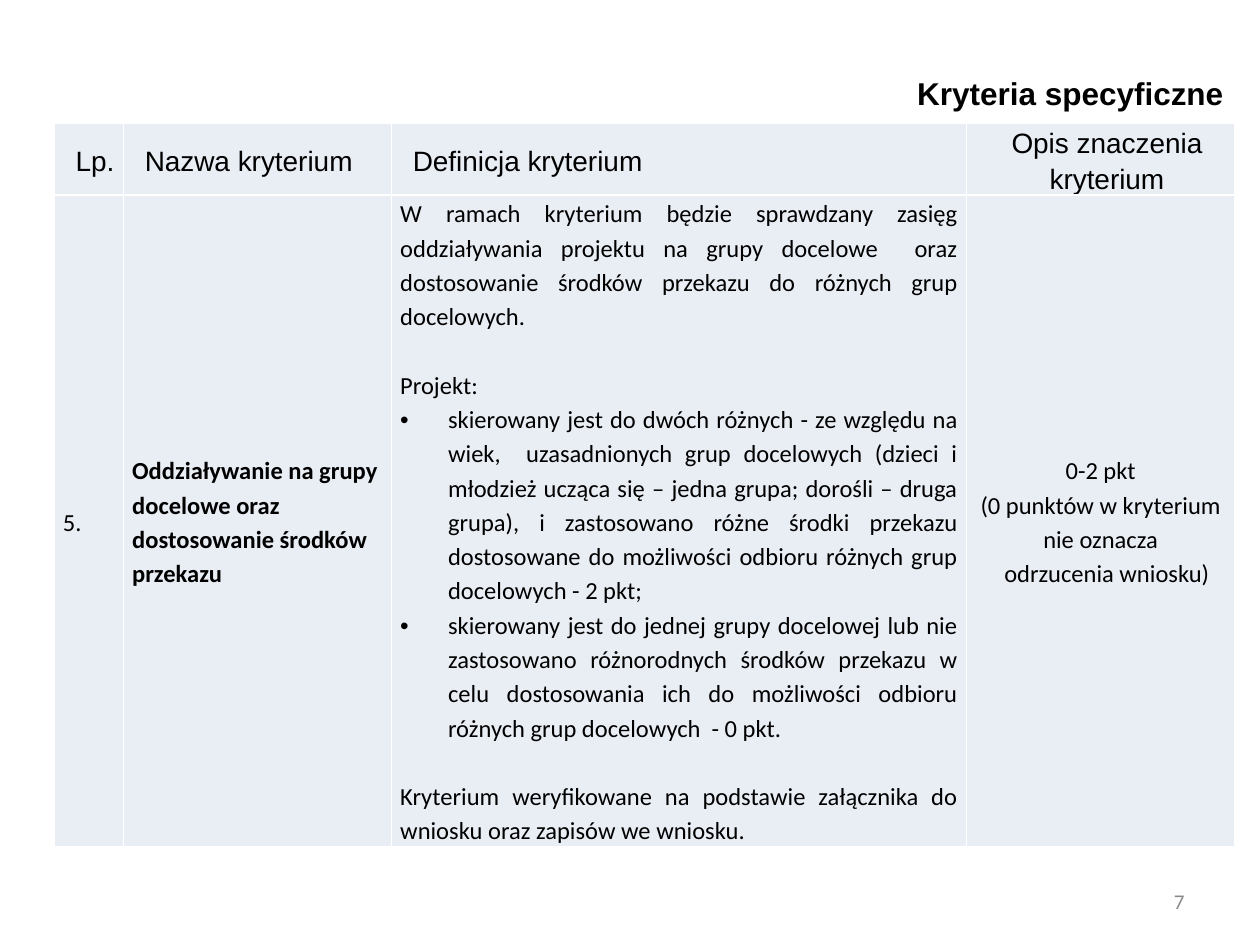
from lxml import etree
from pptx import Presentation
from pptx.dml.color import RGBColor
from pptx.enum.text import MSO_ANCHOR, MSO_AUTO_SIZE, PP_ALIGN
from pptx.oxml.ns import qn
from pptx.util import Emu, Inches, Pt

LEFT, CENTER, RIGHT, JUSTIFY = PP_ALIGN.LEFT, PP_ALIGN.CENTER, PP_ALIGN.RIGHT, PP_ALIGN.JUSTIFY
TOP, MIDDLE = MSO_ANCHOR.TOP, MSO_ANCHOR.MIDDLE
NO_AUTOFIT = MSO_AUTO_SIZE.NONE
TITLE_ONLY = 5
BLACK, WHITE, GREY, PALE_BLUE = "000000", "FFFFFF", "898989", "E9EDF4"
LINE_GAP = 19.6

COLUMN_SHARES = (0.55, 2.13, 4.57, 2.13)
ROW_SHARES = (0.55, 5.15)
HEADINGS = ("Lp.", "Nazwa kryterium", "Definicja kryterium", "Opis znaczenia kryterium")
CRITERION = (
    [("5.", {"after": 10})],
    [("Oddziaływanie na grupy docelowe oraz dostosowanie środków przekazu", {"bold": True})],
    [
        ("W ramach kryterium będzie sprawdzany zasięg oddziaływania projektu na grupy "
         "docelowe  oraz dostosowanie środków przekazu do różnych grup docelowych.", {}),
        ("Projekt:", {"before": LINE_GAP}),
        ("skierowany jest do dwóch różnych - ze względu na wiek,  uzasadnionych grup docelowych "
         "(dzieci i młodzież ucząca się – jedna grupa; dorośli – druga grupa), i zastosowano "
         "różne środki przekazu dostosowane do możliwości odbioru różnych grup docelowych - 2 pkt;",
         {"bullet": "•"}),
        ("skierowany jest do jednej grupy docelowej lub nie zastosowano różnorodnych środków "
         "przekazu w celu dostosowania ich do możliwości odbioru różnych grup docelowych  - 0 pkt.",
         {"bullet": "•"}),
        ("Kryterium weryfikowane na podstawie załącznika do wniosku oraz zapisów we wniosku.",
         {"before": LINE_GAP}),
    ],
    [
        ("0-2 pkt", {}),
        ("(0 punktów w kryterium nie oznacza", {}),
        ("odrzucenia wniosku)", {"margin": 0.1, "after": 10}),
    ],
)
CRITERION_ALIGNMENTS = (LEFT, LEFT, JUSTIFY, CENTER)


def color(hex_value):
    """Turn a hex string into a colour."""
    return RGBColor.from_string(hex_value)


def write(paragraph, text, size=14, font="Calibri", fill=BLACK, bold=False, align=LEFT,
          spacing=1.15, before=0, after=0, margin=0, bullet=None):
    """Fill one paragraph with formatted text."""
    paragraph.alignment = align
    paragraph.line_spacing = spacing
    paragraph.space_before = Pt(before)
    paragraph.space_after = Pt(after)
    properties = paragraph._p.get_or_add_pPr()
    hanging = Inches(0.38) if bullet else 0
    properties.set("marL", str(hanging or Inches(margin)))
    properties.set("indent", str(-hanging))
    if bullet:
        etree.SubElement(properties, qn("a:buFont")).set("typeface", "Arial")
        etree.SubElement(properties, qn("a:buChar")).set("char", bullet)
    run = paragraph.add_run()
    run.text = text
    run.font.size = Pt(size)
    run.font.name = font
    run.font.bold = bold
    run.font.color.rgb = color(fill)


def add_borders(cell):
    """Draw a thin white line on each side of a cell."""
    properties = cell._tc.get_or_add_tcPr()
    for position, side in enumerate(("lnL", "lnR", "lnT", "lnB")):
        line = etree.Element(qn(f"a:{side}"), w=str(Pt(1)))
        solid = etree.SubElement(line, qn("a:solidFill"))
        etree.SubElement(solid, qn("a:srgbClr")).set("val", WHITE)
        properties.insert(position, line)


def fill_cell(cell, paragraphs, **style):
    """Format a table cell and write its paragraphs."""
    cell.fill.solid()
    cell.fill.fore_color.rgb = color(PALE_BLUE)
    add_borders(cell)
    cell.vertical_anchor = MIDDLE
    cell.margin_left = cell.margin_right = Inches(0.07)
    cell.margin_top = cell.margin_bottom = 0
    frame = cell.text_frame
    for index, (text, own_style) in enumerate(paragraphs):
        paragraph = frame.add_paragraph() if index else frame.paragraphs[0]
        write(paragraph, text, **{**style, **own_style})


def add_title(slide, box):
    """Place the slide title in its box."""
    title = slide.shapes.title
    title.left, title.top, title.width, title.height = box
    frame = title.text_frame
    frame.auto_size = NO_AUTOFIT
    frame.word_wrap = False
    frame.vertical_anchor = TOP
    write(frame.paragraphs[0], "Kryteria specyficzne", size=18, font="Arial", bold=True,
          align=RIGHT, spacing=1.0)


def add_criteria(slide, box):
    """Build the criteria table, sharing the box among columns and rows."""
    width, height = box[2:]
    table = slide.shapes.add_table(len(ROW_SHARES), len(COLUMN_SHARES), *box).table
    table.first_row = table.horz_banding = False
    for column, share in zip(table.columns, COLUMN_SHARES):
        column.width = Emu(round(width * share / sum(COLUMN_SHARES)))
    for row, share in zip(table.rows, ROW_SHARES):
        row.height = Emu(round(height * share / sum(ROW_SHARES)))
    for index, heading in enumerate(HEADINGS):
        fill_cell(table.cell(0, index), [(heading, {})], size=16, font="Arial", margin=0.1,
                  after=10, align=CENTER if index == len(HEADINGS) - 1 else LEFT)
    for index, (paragraphs, align) in enumerate(zip(CRITERION, CRITERION_ALIGNMENTS)):
        fill_cell(table.cell(1, index), paragraphs, align=align)


def add_page_number(slide, box):
    """Place the page number in its box."""
    frame = slide.shapes.add_textbox(*box).text_frame
    frame.word_wrap = True
    frame.vertical_anchor = MIDDLE
    write(frame.paragraphs[0], "7", size=12, fill=GREY, align=RIGHT, spacing=1.0)


def main():
    """Build and save the presentation."""
    deck = Presentation()
    deck.slide_width, deck.slide_height = Inches(10), Inches(7.5)
    slide = deck.slides.add_slide(deck.slide_layouts[TITLE_ONLY])
    add_criteria(slide, [Inches(n) for n in (0.43, 0.98, 9.37, 5.7)])
    add_title(slide, [Inches(n) for n in (6.42, 0.54, 3.39, 0.5)])
    add_page_number(slide, [Inches(n) for n in (7.17, 6.95, 2.33, 0.4)])
    deck.save("out.pptx")


if __name__ == "__main__":
    main()
